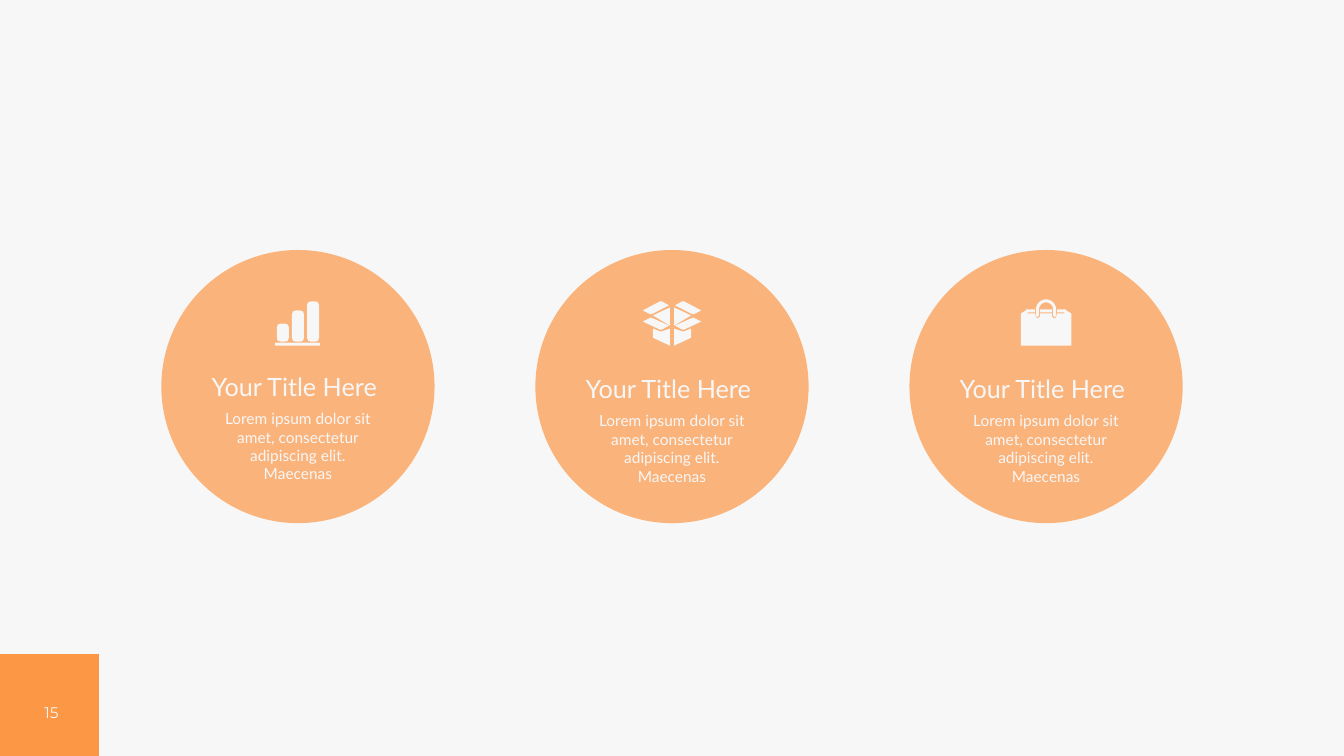
from dataclasses import dataclass
from math import cos, pi, sin

from lxml.etree import SubElement
from pptx import Presentation
from pptx.dml.color import RGBColor
from pptx.enum.shapes import MSO_SHAPE
from pptx.enum.text import PP_ALIGN
from pptx.oxml.ns import qn
from pptx.util import Inches, Pt


@dataclass(frozen=True)
class Theme:
    light: RGBColor = RGBColor(0xF7, 0xF7, 0xF7)
    orange: RGBColor = RGBColor(0xFC, 0x97, 0x45)
    heading_size: int = 18
    body_size: int = 11


theme = Theme()
presentation = Presentation()
presentation.slide_width = Inches(13.33)
presentation.slide_height = Inches(7.5)
slide = presentation.slides.add_slide(presentation.slide_layouts[6])
slide.background.fill.solid()
slide.background.fill.fore_color.rgb = theme.light


def paint(shape, color):
    shape.shadow.inherit = False
    shape.fill.solid()
    shape.fill.fore_color.rgb = color
    shape.line.fill.background()


def add_text(text, left, top, width, height, size, font_name, alignment, inset=0.05):
    box = slide.shapes.add_textbox(Inches(left), Inches(top), Inches(width), Inches(height))
    frame = box.text_frame
    frame.word_wrap = True
    frame.margin_top = frame.margin_bottom = Inches(inset)
    paragraph = frame.paragraphs[0]
    paragraph.alignment = alignment
    run = paragraph.add_run()
    run.text = text
    for name, value in {"name": font_name, "size": Pt(size)}.items():
        setattr(run.font, name, value)
    run.font.color.rgb = theme.light


page_square = slide.shapes.add_shape(
    MSO_SHAPE.RECTANGLE, 0, Inches(6.49), Inches(0.98), Inches(1.01))
paint(page_square, theme.orange)
add_text("15", 0.02, 6.98, 0.98, 0.19, theme.body_size, "Montserrat", PP_ALIGN.CENTER, 0)

circle_size = 2.71
circle_lefts = [1.6 + 3.71 * index for index in range(3)]
for left in circle_lefts:
    circle = slide.shapes.add_shape(
        MSO_SHAPE.OVAL, Inches(left), Inches(2.48), Inches(circle_size), Inches(circle_size))
    paint(circle, theme.orange)
    color_element = circle.fill._xPr.find(qn("a:solidFill"))[0]
    SubElement(color_element, qn("a:alpha"), val="70000")

box_half = [
    [(0.02, 3.05), (0.19, 3.13), (0.02, 3.23)],
    [(0.03, 3.23), (0.21, 3.15), (0.29, 3.19), (0.12, 3.27), (0.1, 3.27)],
    [(0.03, 3.03), (0.1, 2.99), (0.12, 2.99), (0.29, 3.08), (0.21, 3.12)],
    [(0.02, 3.26), (0.11, 3.29), (0.19, 3.26), (0.19, 3.35), (0.02, 3.43)],
]
box_icon = [[(side * x, y) for x, y in panel] for side in (-1, 1) for panel in box_half]

bag_half = [
    (-0.25, 3.43), (-0.25, 3.11), (-0.2, 3.08), (-0.2, 3.07), (-0.11, 3.07), (-0.11, 3.1),
    (-0.18, 3.1), (-0.19, 3.11), (-0.11, 3.11), (-0.1, 3.15), (-0.08, 3.16), (-0.06, 3.14),
    (-0.06, 3.11),
]
bag_body = bag_half + [(-x, y) for x, y in reversed(bag_half)]
angles = [pi - pi * step / 12 for step in range(13)]
outer_arch = [(0.1 * cos(angle), 3.07 - 0.1 * sin(angle)) for angle in angles]
inner_arch = [(0.07 * cos(angle), 3.07 - 0.07 * sin(angle)) for angle in reversed(angles)]
bag_handle = [(-0.09, 3.15), (-0.1, 3.13), *outer_arch, (0.1, 3.13), (0.09, 3.15),
              (0.07, 3.13), *inner_arch, (-0.07, 3.13)]
bag_middle = [(-0.06, 3.1), (-0.06, 3.07), (0.06, 3.07), (0.06, 3.1)]

chart_icon = []
for left, top in [(-0.06, 3.08), (-0.21, 3.21), (0.09, 2.99)]:
    right, bottom = left + 0.12, 3.39
    chart_icon.append([
        (left, top + 0.04), (left + 0.01, top + 0.01), (left + 0.04, top),
        (right - 0.04, top), (right - 0.01, top + 0.01), (right, top + 0.04),
        (right, bottom - 0.04), (right - 0.01, bottom - 0.01), (right - 0.04, bottom),
        (left + 0.04, bottom), (left + 0.01, bottom - 0.01), (left, bottom - 0.04)])
chart_icon.append([(-0.23, 3.4), (0.22, 3.4), (0.22, 3.43), (-0.23, 3.43)])

icons = [chart_icon, box_icon, [bag_body, bag_handle, bag_middle]]
for left, icon in zip(circle_lefts, icons):
    center = left + circle_size / 2
    contours = [[(Inches(center + x), Inches(y)) for x, y in contour] for contour in icon]
    builder = slide.shapes.build_freeform(*contours[0][0])
    for contour in contours:
        if contour is not contours[0]:
            builder.move_to(*contour[0])
        builder.add_line_segments(contour[1:])
    paint(builder.convert_to_shape(), theme.light)

for left, text_top in zip(circle_lefts, (3.63, 3.65, 3.65)):
    add_text("Your Title Here", left + 0.4, text_top, 1.92, 0.4,
             theme.heading_size, "Lato", PP_ALIGN.LEFT)
    add_text("Lorem ipsum dolor sit amet, consectetur adipiscing elit. Maecenas",
             left + 0.44, text_top + 0.38, 1.83, 0.84,
             theme.body_size, "Lato", PP_ALIGN.CENTER)

presentation.save("out.pptx")
